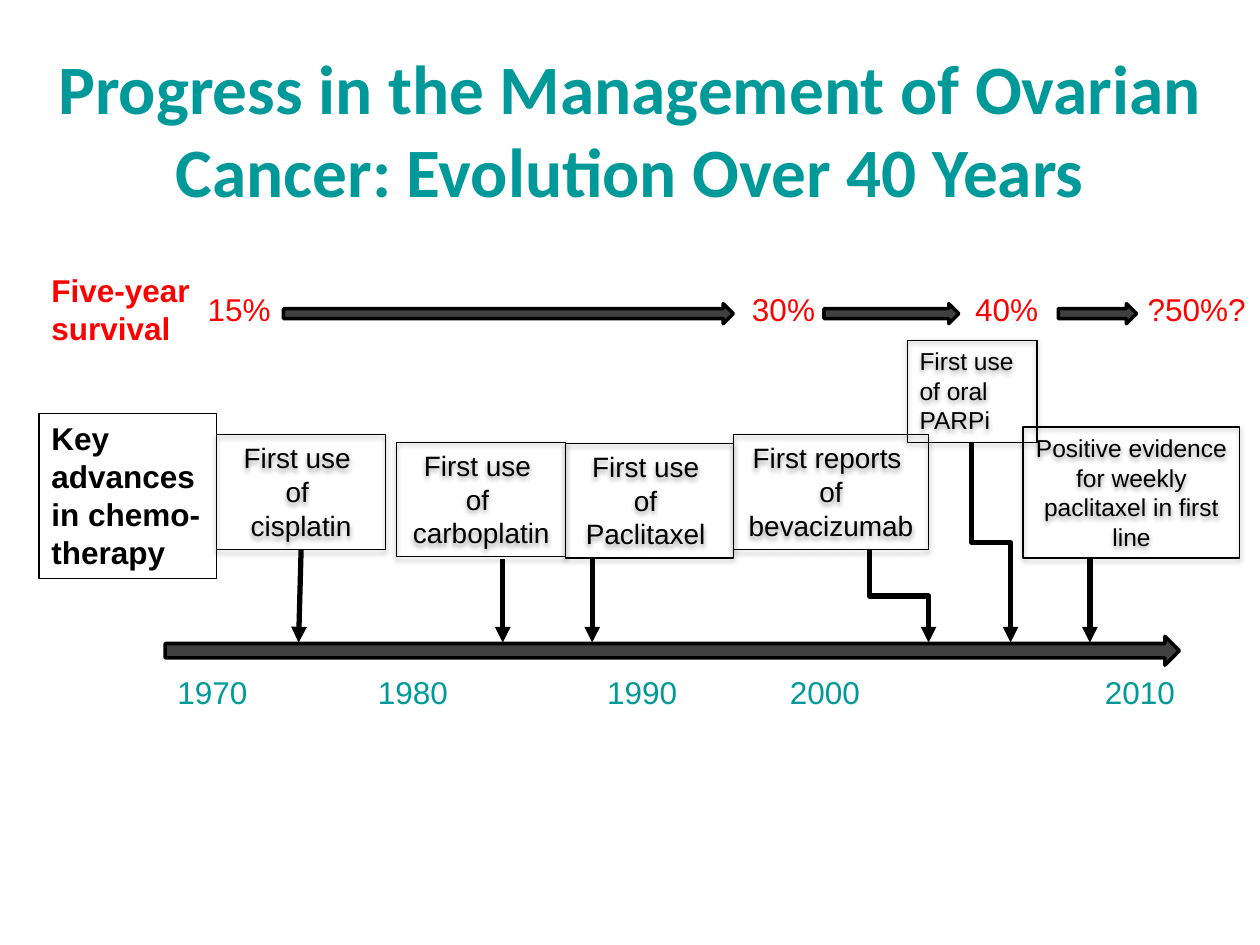
from lxml.etree import SubElement
from pptx import Presentation
from pptx.dml.color import RGBColor
from pptx.enum.shapes import MSO_CONNECTOR as CONN, MSO_SHAPE
from pptx.enum.text import MSO_ANCHOR, MSO_AUTO_SIZE, PP_ALIGN
from pptx.oxml.ns import qn
from pptx.util import Inches, Pt

COLORS = {"teal": "009999", "red": "FF0000", "black": "000000", "gray": "404040"}


def rgb(name):
    return RGBColor.from_string(COLORS[name])


def write(tf, text, size=18, color="black", bold=False, align=PP_ALIGN.LEFT, font="Arial"):
    """Fill a text frame, one paragraph per line of text."""
    for i, line in enumerate(text.split("\n")):
        p = tf.paragraphs[0] if i == 0 else tf.add_paragraph()
        p.alignment = align
        r = p.add_run()
        r.text = line
        r.font.name, r.font.size, r.font.bold = font, Pt(size), bold
        r.font.color.rgb = rgb(color)


def add_shadow(sp):
    effects = SubElement(sp.element.spPr, qn("a:effectLst"))
    shadow = SubElement(effects, qn("a:outerShdw"), blurRad=str(Pt(3.1)),
                        dist=str(Pt(1.6)), dir="5400000", rotWithShape="0")
    color = SubElement(shadow, qn("a:srgbClr"), val=COLORS["black"])
    SubElement(color, qn("a:alpha"), val="38000")


def add_text(s, box, text, wrap=True, border=False, shadow=False, **fmt):
    sp = s.shapes.add_textbox(*map(Inches, box))
    tf = sp.text_frame
    tf.word_wrap = wrap
    tf.auto_size = MSO_AUTO_SIZE.SHAPE_TO_FIT_TEXT
    write(tf, text, **fmt)
    if border:
        sp.line.color.rgb = rgb("black")
        sp.line.width = Pt(0.75)
    if shadow:
        add_shadow(sp)
    return sp


def add_block_arrow(s, box):
    sp = s.shapes.add_shape(MSO_SHAPE.RIGHT_ARROW, *map(Inches, box))
    sp.shadow.inherit = False
    sp.fill.solid()
    sp.fill.fore_color.rgb = rgb("gray")
    sp.line.color.rgb = rgb("black")
    sp.line.width = Pt(2)


def add_pointer(s, x1, y1, x2, y2, elbow=False):
    """Arrow down to the timeline; an elbow leaves and arrives vertically."""
    kind, ends = CONN.STRAIGHT, (x1, y1, x2, y2)
    if elbow:
        # A horizontal elbow around the same centre, turned by 270 degrees
        cx, cy = (x1 + x2) / 2, (y1 + y2) / 2
        dx, dy = (y2 - y1) / 2, (x2 - x1) / 2
        kind, ends = CONN.ELBOW, (cx + dx, cy - dy, cx - dx, cy + dy)
    c = s.shapes.add_connector(kind, *map(Inches, ends))
    if elbow:
        c.element.spPr.find(qn("a:xfrm")).set("rot", "16200000")
    c.line.color.rgb = rgb("black")
    c.line.width = Pt(3)
    SubElement(c.line._get_or_add_ln(), qn("a:tailEnd"), type="triangle")
    SubElement(c.element.spPr, qn("a:effectLst"))
    return c


def add_title(s, box, text):
    title = s.shapes.title
    title.left, title.top, title.width, title.height = map(Inches, box)
    title.text_frame.word_wrap = True
    title.text_frame.vertical_anchor = MSO_ANCHOR.MIDDLE
    write(title.text_frame, text, size=39.6, color="teal", bold=True,
          align=PP_ALIGN.CENTER, font="Calibri")


def add_survival(s, left, top):
    """Row of survival rates joined by block arrows."""
    add_text(s, (left, top, 1.41, 0.71), "Five-year survival", color="red", bold=True)
    rates = [(1.24, 0.76, "15%"), (5.56, 0.76, "30%"),
             (7.33, 0.76, "40%"), (8.7, 0.99, "?50%?")]
    for dx, width, rate in rates:
        add_text(s, (left + dx, top + 0.15, width, 0.4), rate, wrap=False, color="red")
    for dx, width in [(1.94, 3.57), (6.23, 1.07), (8.09, 0.62)]:
        add_block_arrow(s, (left + dx, top + 0.31, width, 0.16))


def add_advances(s, left, top):
    """Row of treatment milestones; returns the boxes by name."""
    add_text(s, (left, top, 1.41, 1.31), "Key advances in chemo-therapy",
             border=True, bold=True)
    center = PP_ALIGN.CENTER
    milestones = [
        ("cisplatin", (1.41, 0.17, 1.34, 0.91), "First use \nof \ncisplatin", 16, center),
        ("carboplatin", (2.84, 0.23, 1.34, 0.91), "First use \nof \ncarboplatin", 16, center),
        ("paclitaxel", (4.18, 0.24, 1.33, 0.91), "First use \nof \nPaclitaxel ", 16, center),
        ("bevacizumab", (5.51, 0.17, 1.55, 0.91), "First reports \nof\nbevacizumab", 16, center),
        ("weekly", (7.81, 0.11, 1.72, 1.04),
         "Positive evidence \nfor weekly paclitaxel in first line", 14, center),
        ("parpi", (6.89, -0.58, 1.03, 0.81), "First use of oral PARPi", 14, PP_ALIGN.LEFT),
    ]
    return {name: add_text(s, (left + dx, top + dy, w, h), text, border=True,
                           shadow=True, size=size, align=align)
            for name, (dx, dy, w, h), text, size, align in milestones}


def add_timeline(s, left, top, width):
    add_block_arrow(s, (left, top, width, 0.23))
    for dx, year in [(0, 1970), (1.59, 1980), (3.41, 1990), (4.86, 2000), (7.36, 2010)]:
        add_text(s, (left + dx, top + 0.24, 0.76, 0.4), str(year), wrap=False, color="teal")


def add_pointers(s, boxes, bottom):
    """Arrows from the milestones to the timeline."""
    add_pointer(s, 6.9, 4.36, 7.37, bottom, elbow=True)
    add_pointer(s, 7.71, 3.51, 8.02, bottom, elbow=True)
    for x, top in [(8.65, 4.44), (4.7, 4.43), (3.99, 4.44)]:
        add_pointer(s, x, top, x, bottom)
    add_pointer(s, 2.39, 4.36, 2.37, bottom).begin_connect(boxes["cisplatin"], 2)


def main():
    prs = Presentation()
    prs.slide_width, prs.slide_height = Inches(10), Inches(7.5)
    s = prs.slides.add_slide(prs.slide_layouts[5])
    add_title(s, (0, 0.32, 10, 1.4),
              "Progress in the Management of Ovarian Cancer: Evolution Over 40 Years")
    add_survival(s, 0.31, 2.1)
    boxes = add_advances(s, 0.31, 3.28)
    add_timeline(s, 1.31, 5.05, 8.05)
    add_pointers(s, boxes, 5.1)
    prs.save("out.pptx")


if __name__ == "__main__":
    main()
